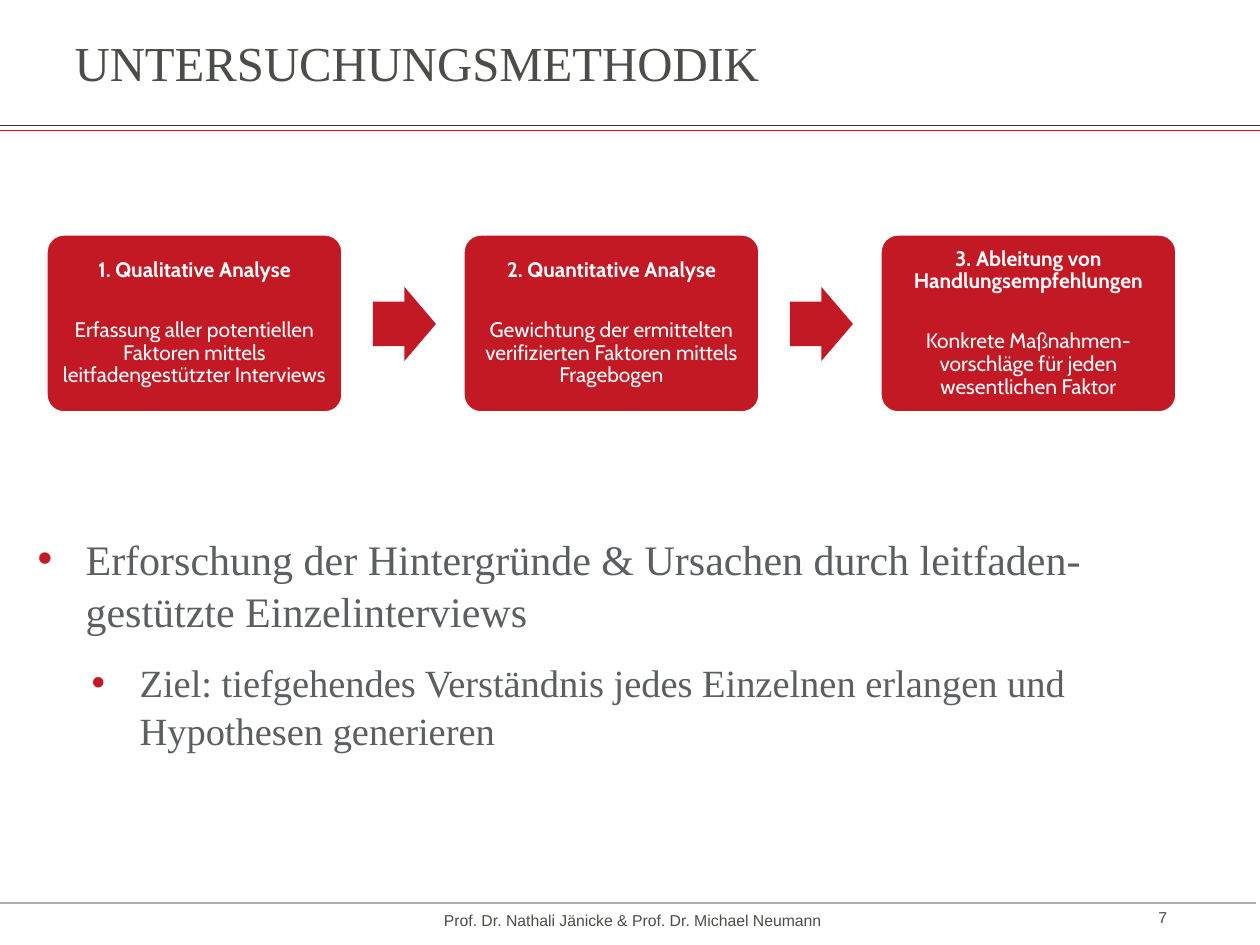
"""Build the slide on the research method: three process steps and a bullet list."""
from dataclasses import dataclass

import lxml.etree
import pptx
import pptx.dml.color
import pptx.enum.shapes
import pptx.enum.text
import pptx.oxml.ns
import pptx.util

RGBColor = pptx.dml.color.RGBColor
Pt = pptx.util.Pt
Align = pptx.enum.text.PP_ALIGN
Anchor = pptx.enum.text.MSO_ANCHOR
Shape = pptx.enum.shapes.MSO_SHAPE
qn = pptx.oxml.ns.qn

EMU_PER_PX = 914400 // 126
RED = RGBColor(0xC3, 0x19, 0x24)
RULE_RED = RGBColor(0xFF, 0x00, 0x00)
RULE_DARK = RGBColor(0x30, 0x32, 0x34)
RULE_GREY = RGBColor(0xAC, 0xAE, 0xAA)
DARK = RGBColor(0x4B, 0x4E, 0x48)
GREY = RGBColor(0x5B, 0x5F, 0x61)
WHITE = RGBColor(0xFF, 0xFF, 0xFF)
SERIF, SANS, STEP_FONT = "Times New Roman", "Arial", "Cabin"
STEP_X, STEP_PITCH = 46, 417


@dataclass
class Rule:
    x: int
    y: int
    color: RGBColor
    weight: float


@dataclass
class Step:
    heading: str
    detail: str


@dataclass
class Bullet:
    text: str
    level: int
    size: int
    indent: int


RULES = [
    Rule(-4, 903, RULE_GREY, 1),
    Rule(0, 130, RULE_RED, 0.5),
    Rule(0, 125, RULE_DARK, 0.5),
]
STEPS = [
    Step("1. Qualitative Analyse",
         "Erfassung aller potentiellen Faktoren mittels leitfadengestützter Interviews"),
    Step("2. Quantitative Analyse",
         "Gewichtung der ermittelten verifizierten Faktoren mittels Fragebogen"),
    Step("3. Ableitung von Handlungsempfehlungen",
         "Konkrete Maßnahmen-vorschläge für jeden wesentlichen Faktor"),
]
BULLETS = [
    Bullet("Erforschung der Hintergründe & Ursachen durch leitfaden-gestützte Einzelinterviews",
           0, 24, 48),
    Bullet("Ziel: tiefgehendes Verständnis jedes Einzelnen erlangen und Hypothesen generieren",
           1, 22, 102),
]


def px(n: int) -> int:
    """Turn pixels into EMU."""
    return n * EMU_PER_PX


def place(sp, x: int, y: int, w: int, h: int) -> None:
    """Move and size a shape."""
    sp.left, sp.top, sp.width, sp.height = px(x), px(y), px(w), px(h)


def add_run(p, text: str, font: str, size: float, color: RGBColor, bold: bool = False) -> None:
    """Append a formatted run to a paragraph."""
    r = p.add_run()
    r.text = text
    r.font.name, r.font.size, r.font.bold = font, Pt(size), bold
    r.font.color.rgb = color


def add_rule(s, rule: Rule) -> None:
    """Draw a horizontal line across the slide."""
    line = s.shapes.add_connector(
        pptx.enum.shapes.MSO_CONNECTOR.STRAIGHT,
        px(rule.x), px(rule.y), px(rule.x + 1260), px(rule.y))
    line.line.color.rgb = rule.color
    line.line.width = Pt(rule.weight)
    lxml.etree.SubElement(line._element.spPr, qn("a:effectLst"))


def add_label(s, text: str, x: int, y: int, w: int, h: int, align, anchor, inset: int) -> None:
    """Add a small text box for the footer."""
    sp = s.shapes.add_textbox(px(x), px(y), px(w), px(h))
    tf = sp.text_frame
    tf.word_wrap = True
    tf.vertical_anchor = anchor
    tf.margin_left = tf.margin_right = px(inset)
    tf.margin_top = tf.margin_bottom = px(inset // 2)
    p = tf.paragraphs[0]
    p.alignment = align
    add_run(p, text, SANS, 9, DARK)


def add_block(s, kind, x: int, y: int, w: int, h: int, adjustments: list[float]):
    """Add a red preset shape without outline or shadow."""
    sp = s.shapes.add_shape(kind, px(x), px(y), px(w), px(h))
    sp.shadow.inherit = False
    sp.fill.solid()
    sp.fill.fore_color.rgb = RED
    sp.line.fill.background()
    for i, value in enumerate(adjustments):
        sp.adjustments[i] = value
    return sp


def add_step(s, step: Step, x: int) -> None:
    """Add a rounded box with a heading and a detail text."""
    sp = add_block(s, Shape.ROUNDED_RECTANGLE, x, 234, 297, 179, [0.1])
    sp.line.color.rgb = WHITE
    sp.line.width = Pt(2)
    tf = sp.text_frame
    tf.word_wrap = True
    tf.vertical_anchor = Anchor.MIDDLE
    tf.margin_left = tf.margin_right = tf.margin_top = tf.margin_bottom = px(6)
    heading, detail = tf.paragraphs[0], tf.add_paragraph()
    for p in (heading, detail):
        p.alignment = Align.CENTER
        p.line_spacing = 0.9
    heading.space_after = Pt(21.4)
    add_run(heading, step.heading, STEP_FONT, 12, WHITE, True)
    add_run(detail, step.detail, STEP_FONT, 12, WHITE)


def fill_bullet(p, bullet: Bullet) -> None:
    """Format a paragraph as a list item with a red bullet."""
    p.level = bullet.level
    pPr = p._p.get_or_add_pPr()
    pPr.set("marL", str(px(bullet.indent)))
    pPr.set("indent", str(px(-48)))
    color = lxml.etree.SubElement(pPr, qn("a:buClr"))
    lxml.etree.SubElement(color, qn("a:srgbClr"), val=str(RED))
    lxml.etree.SubElement(pPr, qn("a:buFont"), typeface=SANS)
    lxml.etree.SubElement(pPr, qn("a:buChar"), char="•")
    p.line_spacing = 1.04
    p.space_before = Pt(12 if bullet.level else 0)
    add_run(p, bullet.text, SERIF, bullet.size, GREY)


def main() -> None:
    """Build and save the slide."""
    prs = pptx.Presentation()
    prs.slide_width, prs.slide_height = pptx.util.Inches(10), pptx.util.Inches(7.5)
    s = prs.slides.add_slide(prs.slide_layouts[1])

    for rule in RULES:
        add_rule(s, rule)

    title, body = s.shapes.title, s.placeholders[1]
    place(title, 62, -4, 775, 131)
    place(body, 25, 525, 1172, 319)
    for sp, anchor in ((title, Anchor.MIDDLE), (body, Anchor.TOP)):
        sp.text_frame.word_wrap = True
        sp.text_frame.auto_size = pptx.enum.text.MSO_AUTO_SIZE.NONE
        sp.text_frame.vertical_anchor = anchor
    p = title.text_frame.paragraphs[0]
    p.alignment = Align.LEFT
    add_run(p, "UNTERSUCHUNGSMETHODIK", SERIF, 27.9, DARK)

    tf = body.text_frame
    for i, bullet in enumerate(BULLETS):
        fill_bullet(tf.add_paragraph() if i else tf.paragraphs[0], bullet)

    for i, step in enumerate(STEPS):
        x = STEP_X + i * STEP_PITCH
        add_step(s, step, x)
        if i < len(STEPS) - 1:
            add_block(s, Shape.RIGHT_ARROW, x + 327, 287, 63, 74, [0.6, 0.5])

    add_label(s, "Prof. Dr. Nathali Jänicke & Prof. Dr. Michael Neumann",
              427, 893, 411, 55, Align.CENTER, Anchor.MIDDLE, 12)
    add_label(s, "7", 898, 898, 297, 48, Align.RIGHT, Anchor.TOP, 28)
    prs.save("out.pptx")


if __name__ == "__main__":
    main()
